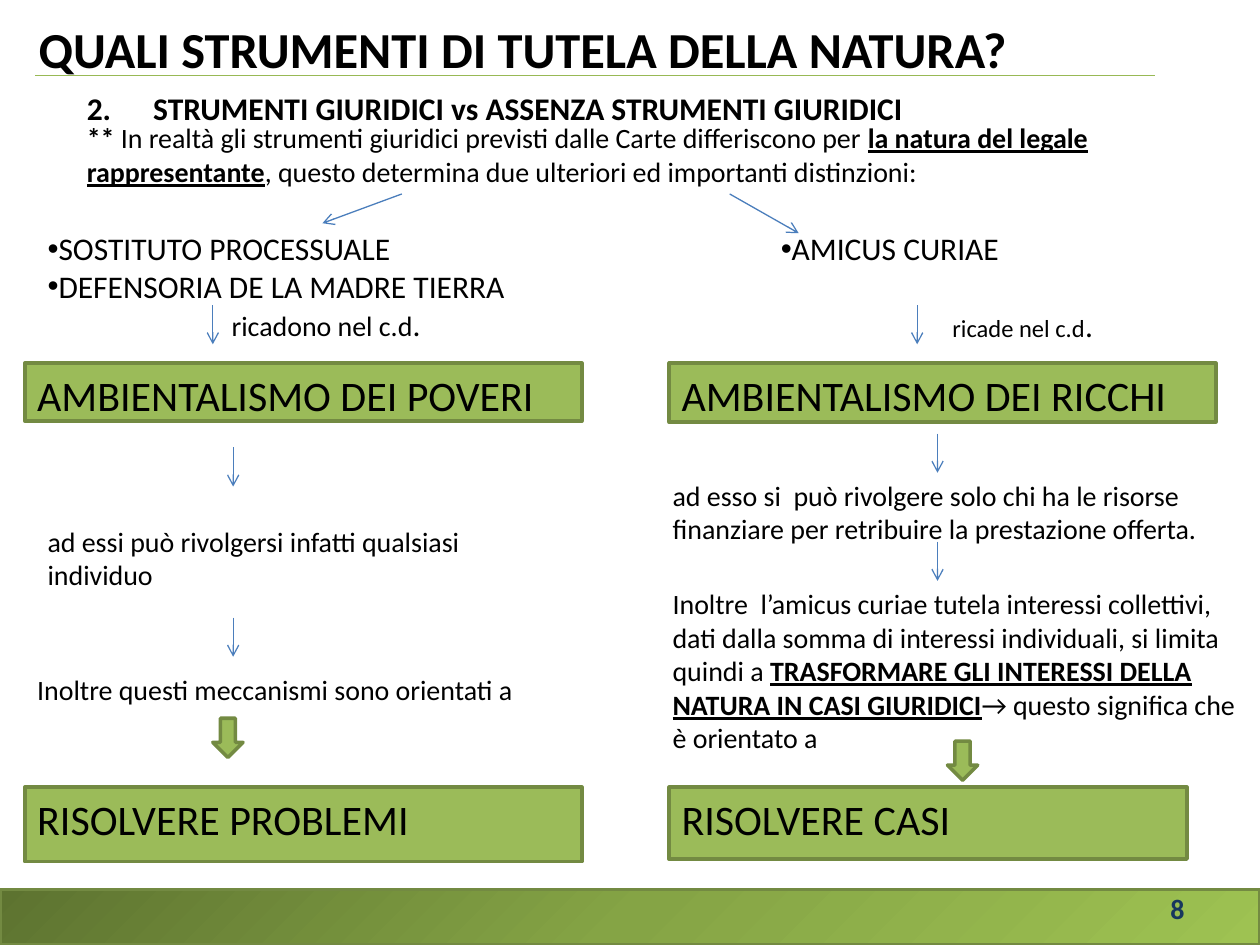
from copy import deepcopy

from lxml import etree
from pptx import Presentation
from pptx.dml.color import RGBColor
from pptx.enum.shapes import MSO_CONNECTOR, MSO_SHAPE
from pptx.enum.text import MSO_ANCHOR, PP_ALIGN
from pptx.oxml.ns import qn
from pptx.util import Cm, Pt

RECTANGLE, DOWN_ARROW = MSO_SHAPE.RECTANGLE, MSO_SHAPE.DOWN_ARROW
STRAIGHT = MSO_CONNECTOR.STRAIGHT
TOP, MIDDLE = MSO_ANCHOR.TOP, MSO_ANCHOR.MIDDLE
LEFT, RIGHT = PP_ALIGN.LEFT, PP_ALIGN.RIGHT


def color(hex_string):
    return RGBColor.from_string(hex_string)


def add_text(paragraph, text, size=16, bold=False, underline=False, ink="000000"):
    run = paragraph.add_run()
    run.text = text
    font = run.font
    font.name, font.size = "Calibri", Pt(size)
    font.bold, font.underline = bold, underline
    font.color.rgb = color(ink)


def set_indent(paragraph, margin, first_line=0):
    properties = paragraph._p.get_or_add_pPr()
    properties.set("marL", str(Cm(margin)))
    properties.set("indent", str(Cm(first_line)))
    return properties


class SlideBuilder:
    """Holds the green style and the slide being filled; lengths are in centimetres."""

    GREEN, DARK_GREEN, BLUE = "9BBB59", "738A42", "4B7EBC"
    GRADIENT = ("5D7330", "85A445", "9EC252")

    def __init__(self, slide):
        self.slide = slide

    def shape(self, kind, left, top, width, height):
        shape = self.slide.shapes.add_shape(kind, Cm(left), Cm(top), Cm(width), Cm(height))
        shape.shadow.inherit = False
        shape.fill.solid()
        shape.fill.fore_color.rgb = color(self.GREEN)
        shape.line.color.rgb = color(self.DARK_GREEN)
        shape.line.width = Pt(2)
        return shape

    def footer_band(self, left, top, width, height):
        band = self.shape(RECTANGLE, left, top, width, height)
        band.fill.gradient()
        band.fill.gradient_angle = 315
        stops = band._element.spPr.find(qn("a:gradFill")).find(qn("a:gsLst"))
        middle = deepcopy(stops[0])
        middle.set("pos", "50000")
        stops.insert(1, middle)
        for stop, shade in zip(band.fill.gradient_stops, self.GRADIENT):
            stop.color.rgb = color(shade)

    def label_box(self, text, left, top, width, height):
        frame = self.shape(RECTANGLE, left, top, width, height).text_frame
        frame.word_wrap = True
        frame.vertical_anchor = TOP
        frame.paragraphs[0].alignment = LEFT
        add_text(frame.paragraphs[0], text, size=24)

    def text_box(self, left, top, width, height, *runs, anchor=TOP, align=LEFT):
        """Add a box whose first paragraph has the given (text, format) runs."""
        box = self.slide.shapes.add_textbox(Cm(left), Cm(top), Cm(width), Cm(height))
        frame = box.text_frame
        frame.word_wrap = True
        frame.vertical_anchor = anchor
        paragraph = frame.paragraphs[0]
        paragraph.alignment = align
        for text, style in runs:
            add_text(paragraph, text, **style)
        return frame

    def numbered_heading(self, number, text, left, top, width, height):
        frame = self.text_box(left, top, width, height, (text, HEADING))
        properties = set_indent(frame.paragraphs[0], 1.34, -1.34)
        etree.SubElement(properties, qn("a:buFont"), typeface="+mj-lt")
        etree.SubElement(properties, qn("a:buAutoNum"), type="arabicPeriod", startAt=str(number))

    def bullet_list(self, left, width, items, remark, size, indent, gap=0):
        """Add bulleted items, followed by an indented remark."""
        frame = self.text_box(left, 4.5, width, 2.57)
        for index, item in enumerate(items):
            paragraph = frame.add_paragraph() if index else frame.paragraphs[0]
            etree.SubElement(set_indent(paragraph, 0), qn("a:buFont"), typeface="Arial")
            etree.SubElement(set_indent(paragraph, 0), qn("a:buChar"), char="•")
            add_text(paragraph, item, size=18)
        paragraph = frame.add_paragraph()
        paragraph.space_before = Pt(gap)
        set_indent(paragraph, indent)
        add_text(paragraph, remark, size=size)
        add_text(paragraph, ".", size=18)

    def line(self, x1, y1, x2, y2, ink=BLUE, arrow=True):
        connector = self.slide.shapes.add_connector(STRAIGHT, Cm(x1), Cm(y1), Cm(x2), Cm(y2))
        connector.line.color.rgb = color(ink)
        connector.line.width = Pt(0.75)
        if arrow:
            etree.SubElement(connector.line._get_or_add_ln(), qn("a:tailEnd"), type="arrow")
        etree.SubElement(connector._element.spPr, qn("a:effectLst"))


PLAIN = {}
BOLD = {"bold": True}
STRESSED = {"bold": True, "underline": True}
HEADING = {"size": 18, "bold": True}


def main():
    presentation = Presentation()
    presentation.slide_width, presentation.slide_height = Cm(25.4), Cm(19.05)
    builder = SlideBuilder(presentation.slides.add_slide(presentation.slide_layouts[6]))

    builder.footer_band(0, 17.93, 25.4, 1.12)
    builder.text_box(18.21, 17.81, 5.92, 1.02,
                     ("8", {"bold": True, "ink": "17375E"}), anchor=MIDDLE, align=RIGHT)

    builder.text_box(0.53, 0.28, 22.86, 1.4,
                     ("QUALI STRUMENTI DI TUTELA DELLA NATURA?", {"size": 28.8, "bold": True}),
                     anchor=MIDDLE)
    builder.line(0.71, 1.52, 23.29, 1.52, ink="98B955", arrow=False)
    builder.numbered_heading(2, "STRUMENTI GIURIDICI vs ASSENZA STRUMENTI GIURIDICI",
                             1.5, 1.68, 21.8, 1.02)
    builder.text_box(
        1.5, 2.31, 23.19, 1.63,
        ("** ", BOLD),
        ("In realtà gli strumenti giuridici previsti dalle Carte differiscono per ", PLAIN),
        ("la natura del legale rappresentante", STRESSED),
        (", questo determina due ulteriori ed importanti distinzioni:", PLAIN))

    builder.bullet_list(0.71, 10.59, ["SOSTITUTO PROCESSUALE", "DEFENSORIA DE LA MADRE TIERRA"],
                        "ricadono nel c.d", size=16, indent=3.71)
    builder.bullet_list(15.49, 7.8, ["AMICUS CURIAE"],
                        "ricade nel c.d", size=14, indent=3.46, gap=22)

    for text, left, top, width, height in (
        ("AMBIENTALISMO DEI POVERI", 0.5, 7.32, 11.23, 1.17),
        ("AMBIENTALISMO DEI RICCHI", 13.49, 7.32, 11.02, 1.19),
        ("RISOLVERE PROBLEMI", 0.5, 15.87, 11.23, 1.5),
        ("RISOLVERE CASI", 13.49, 15.87, 10.44, 1.45),
    ):
        builder.label_box(text, left, top, width, height)

    builder.text_box(0.71, 10.44, 10.39, 1.63,
                     ("ad essi può rivolgersi infatti qualsiasi individuo", PLAIN))
    builder.text_box(0.5, 13.44, 10.39, 0.94,
                     ("Inoltre questi meccanismi sono orientati a", PLAIN))
    builder.text_box(13.31, 9.52, 11.61, 1.63,
                     ("ad esso si  può rivolgere solo chi ha le risorse finanziare "
                      "per retribuire la prestazione offerta.", PLAIN))
    builder.text_box(
        13.31, 11.7, 12.09, 3.67,
        ("Inoltre  l’amicus curiae tutela interessi collettivi, dati dalla somma di "
         "interessi individuali, si limita quindi a ", PLAIN),
        ("TRASFORMARE GLI INTERESSI DELLA NATURA IN CASI GIURIDICI", STRESSED),
        ("→ questo significa che è orientato a", PLAIN))

    builder.line(8.1, 3.91, 6.5, 4.5)
    builder.line(14.71, 3.91, 16.1, 4.7)
    for x, y in ((4.29, 6.15), (18.49, 6.15), (4.7, 9.02), (4.7, 12.45),
                 (18.9, 8.74), (18.9, 10.92)):
        builder.line(x, y, x, y + 0.79)
    for left, top in ((4.29, 14.48), (19.1, 14.94)):
        builder.shape(DOWN_ARROW, left, top, 0.61, 0.79)

    presentation.save("out.pptx")


if __name__ == "__main__":
    main()
